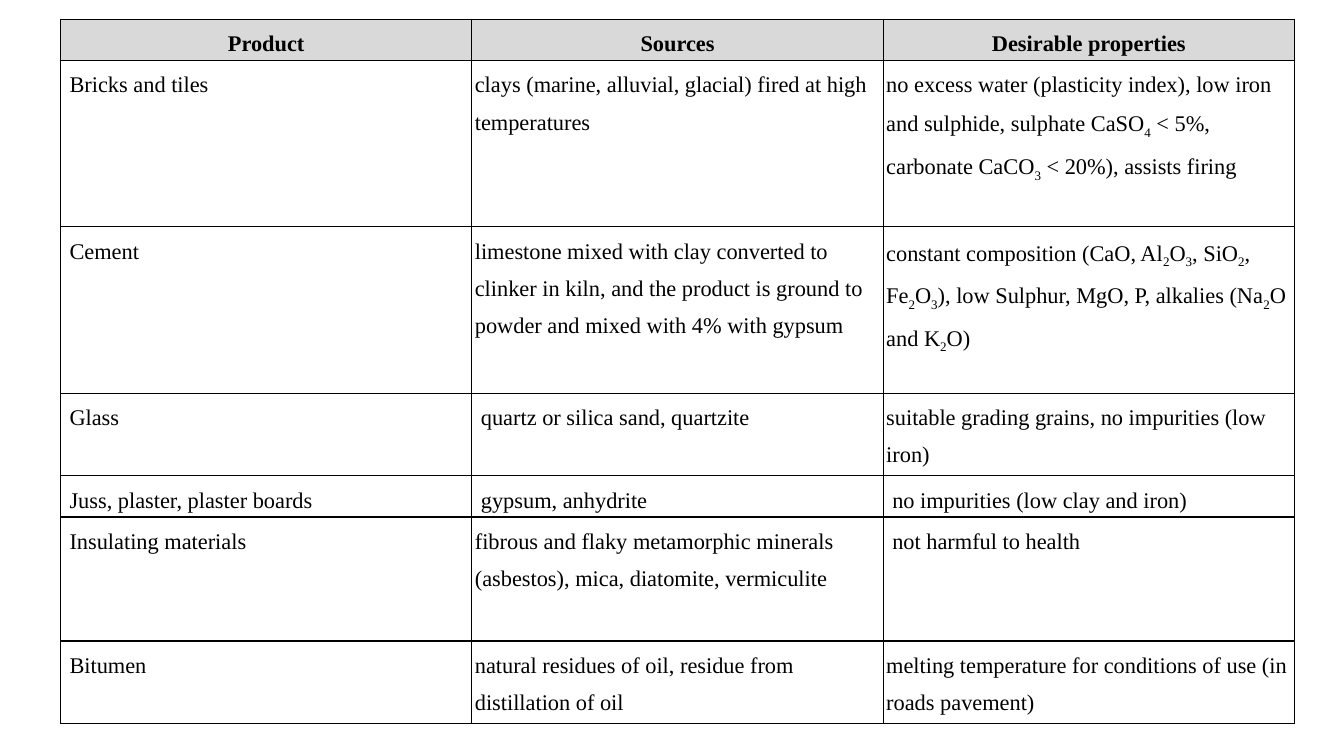
from dataclasses import dataclass

import pptx
import pptx.dml.color
import pptx.enum.text
import pptx.oxml
import pptx.oxml.ns
import pptx.table
import pptx.text.text
import pptx.util
from pptx.util import Inches

BLACK = pptx.dml.color.RGBColor(0x00, 0x00, 0x00)
WHITE = pptx.dml.color.RGBColor(0xFF, 0xFF, 0xFF)
GREY = pptx.dml.color.RGBColor(0xD9, 0xD9, 0xD9)
FONT = "Times New Roman"
WIDTH = Inches(4.08)
INSET = Inches(0.03)
INDENT = Inches(0.06)


@dataclass
class Row:
    height: float
    texts: tuple[str, str, str]
    short: tuple[int, ...] = (0,)  # columns holding one indented line
    head: bool = False


# An underscore lowers the character that follows it.
ROWS = [
    Row(0.41, ("Product", "Sources", "Desirable properties"), (), True),
    Row(1.65, (
        "Bricks and tiles",
        "clays (marine, alluvial, glacial) fired at high temperatures",
        "no excess water (plasticity index), low iron and sulphide, "
        "sulphate CaSO_4 < 5%, carbonate CaCO_3 < 20%), assists firing")),
    Row(1.65, (
        "Cement",
        "limestone mixed with clay converted to clinker in kiln, and the "
        "product is ground to powder and mixed with 4% with gypsum",
        "constant composition (CaO, Al_2O_3, SiO_2, Fe_2O_3), low Sulphur, "
        "MgO, P, alkalies (Na_2O and K_2O)")),
    Row(0.82, (
        "Glass",
        "quartz or silica sand, quartzite",
        "suitable grading grains, no impurities (low iron)"), (0, 1)),
    Row(0.41, (
        "Juss, plaster, plaster boards",
        "gypsum, anhydrite",
        "no impurities (low clay and iron)"), (0, 1, 2)),
    Row(1.23, (
        "Insulating materials",
        "fibrous and flaky metamorphic minerals (asbestos), mica, "
        "diatomite, vermiculite",
        "not harmful to health"), (0, 2)),
    Row(0.82, (
        "Bitumen",
        "natural residues of oil, residue from distillation of oil",
        "melting temperature for conditions of use (in roads pavement)")),
]


def add_text(para: pptx.text.text._Paragraph, text: str) -> None:
    """Add runs, lowering each character marked by an underscore."""
    first, *rest = text.split("_")
    para.add_run().text = first
    for part in rest:
        low = para.add_run()
        low.text = part[0]
        low._r.get_or_add_rPr().set("baseline", "-25000")
        if part[1:]:
            para.add_run().text = part[1:]


def add_borders(cell: pptx.table._Cell) -> None:
    props = cell._tc.get_or_add_tcPr()
    for spot, side in enumerate(("lnL", "lnR", "lnT", "lnB")):
        line = pptx.oxml.parse_xml(
            f'<a:{side} {pptx.oxml.ns.nsdecls("a")} w="12700">'
            f'<a:solidFill><a:srgbClr val="{BLACK}"/></a:solidFill></a:{side}>')
        props.insert(spot, line)


def fill_cell(cell: pptx.table._Cell, text: str, head: bool, short: bool) -> None:
    cell.margin_left = cell.margin_right = INSET
    cell.margin_top = cell.margin_bottom = 0
    cell.fill.solid()
    cell.fill.fore_color.rgb = GREY if head else WHITE
    add_borders(cell)
    para = cell.text_frame.paragraphs[0]
    add_text(para, text)
    align = pptx.enum.text.PP_ALIGN
    para.alignment = align.CENTER if head else align.LEFT
    para.line_spacing = 1.5
    if short:
        para._p.get_or_add_pPr().set("marL", str(INDENT))
    para.font.name = FONT
    para.font.size = pptx.util.Pt(16)
    para.font.bold = head
    para.font.color.rgb = BLACK


def main() -> None:
    deck = pptx.Presentation()
    deck.slide_width, deck.slide_height = Inches(13.33), Inches(7.5)
    slide = deck.slides.add_slide(deck.slide_layouts[6])
    total = Inches(sum(row.height for row in ROWS))
    table = slide.shapes.add_table(
        len(ROWS), 3, Inches(0.6), Inches(0.19), 3 * WIDTH, total).table
    table.first_row = table.horz_banding = False
    for column in table.columns:
        column.width = WIDTH
    for row, line in zip(ROWS, table.rows):
        line.height = Inches(row.height)
        for spot, (cell, text) in enumerate(zip(line.cells, row.texts)):
            fill_cell(cell, text, row.head, spot in row.short)
    deck.save("out.pptx")


if __name__ == "__main__":
    main()
